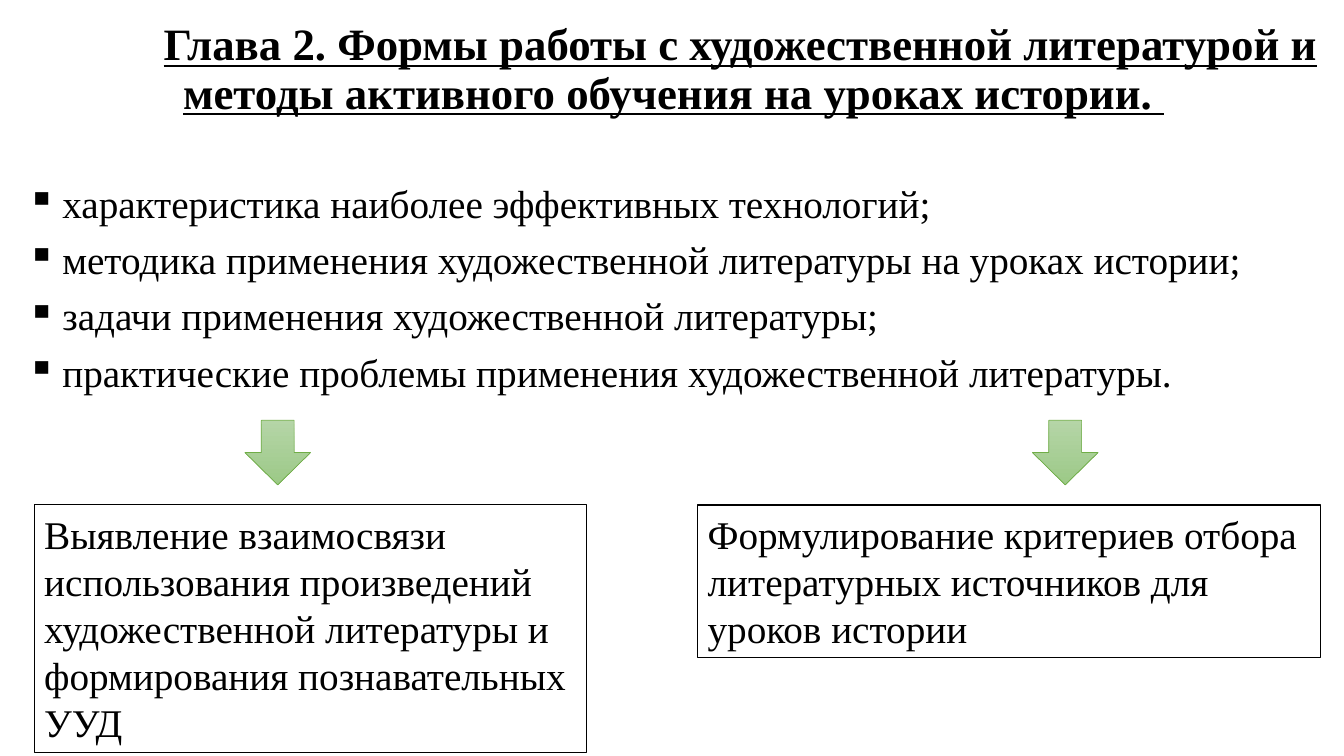
from dataclasses import dataclass

from lxml import etree
from pptx import Presentation
from pptx.dml.color import RGBColor
from pptx.enum import shapes, text
from pptx.oxml import ns
from pptx.util import Inches, Pt


@dataclass(frozen=True)
class Theme:
    """Colours, font and type sizes of the slide."""
    font: str = "Times New Roman"
    ink: RGBColor = RGBColor(0x00, 0x00, 0x00)
    arrow_top: RGBColor = RGBColor(0xB5, 0xD5, 0xA7)
    arrow_bottom: RGBColor = RGBColor(0x9C, 0xC9, 0x87)
    arrow_line: RGBColor = RGBColor(0x70, 0xAD, 0x47)
    title_size: Pt = Pt(32)
    body_size: Pt = Pt(28)


THEME = Theme()

TITLE = ("Глава 2. Формы работы с художественной литературой и "
         "методы активного обучения на уроках истории. ")
TOPICS = [
    "характеристика наиболее эффективных технологий;",
    "методика применения художественной литературы на уроках истории;",
    "задачи применения художественной литературы;",
    "практические проблемы применения художественной литературы.",
]
OUTCOMES = [
    (0.34, 5.48, 2.46, 2.43,
     "Выявление взаимосвязи использования произведений художественной "
     "литературы и формирования познавательных УУД"),
    (6.92, 6.18, 1.51, 10.24,
     "Формулирование критериев отбора литературных источников для уроков истории"),
]


def style_paragraph(paragraph, size):
    """Set the theme font, ink and size on a paragraph."""
    paragraph.font.name = THEME.font
    paragraph.font.size = size
    paragraph.font.color.rgb = THEME.ink


def set_indent(paragraph, left, first):
    """Set the left margin and first-line indent in inches."""
    properties = paragraph._p.get_or_add_pPr()
    properties.set("marL", str(Inches(left)))
    properties.set("indent", str(Inches(first)))
    return properties


def format_title(title):
    """Place and format the slide title."""
    title.left, title.top = Inches(0.17), Inches(0.17)
    title.width, title.height = Inches(13.02), Inches(1.1)
    frame = title.text_frame
    frame.text = TITLE
    frame.word_wrap = True
    frame.auto_size = text.MSO_AUTO_SIZE.NONE
    frame.vertical_anchor = text.MSO_ANCHOR.TOP
    paragraph = frame.paragraphs[0]
    set_indent(paragraph, 0, 1.33)
    paragraph.alignment = text.PP_ALIGN.CENTER
    paragraph.line_spacing = 0.9
    style_paragraph(paragraph, THEME.title_size)
    paragraph.font.bold = True
    paragraph.font.underline = True


def add_topics(slide):
    """Add the bulleted list of topics."""
    box = slide.shapes.add_textbox(Inches(0.17), Inches(1.78), Inches(13.02), Inches(2.3))
    frame = box.text_frame
    frame.word_wrap = True
    for index, topic in enumerate(TOPICS):
        paragraph = frame.add_paragraph() if index else frame.paragraphs[0]
        paragraph.text = topic
        paragraph.alignment = text.PP_ALIGN.JUSTIFY
        paragraph.line_spacing = 0.9
        paragraph.space_before = Pt(10 if index else 0)
        properties = set_indent(paragraph, 0.35, -0.35)
        etree.SubElement(properties, ns.qn("a:buChar"), char="▪")
        style_paragraph(paragraph, THEME.body_size)


def add_outcome(slide, left, width, height, wording):
    """Add a framed outcome box."""
    box = slide.shapes.add_textbox(Inches(left), Inches(5.01), Inches(width), Inches(height))
    box.line.color.rgb = THEME.ink
    box.line.width = Pt(0.75)
    frame = box.text_frame
    frame.word_wrap = True
    frame.auto_size = text.MSO_AUTO_SIZE.SHAPE_TO_FIT_TEXT
    frame.text = wording
    style_paragraph(frame.paragraphs[0], THEME.body_size)


def add_down_arrow(slide, left):
    """Add a green gradient arrow pointing at an outcome."""
    arrow = slide.shapes.add_shape(shapes.MSO_SHAPE.DOWN_ARROW, Inches(left), Inches(4.17),
                                   Inches(0.65), Inches(0.64))
    arrow.shadow.inherit = False
    arrow.fill.gradient()
    arrow.fill.gradient_angle = 270
    for stop, color in zip(arrow.fill.gradient_stops, (THEME.arrow_top, THEME.arrow_bottom)):
        stop.color.rgb = color
    arrow.line.color.rgb = THEME.arrow_line
    arrow.line.width = Pt(0.5)


def main():
    """Build and save the slide."""
    presentation = Presentation()
    presentation.slide_width = Inches(13.33)
    presentation.slide_height = Inches(7.5)
    slide = presentation.slides.add_slide(presentation.slide_layouts.get_by_name("Title Only"))
    format_title(slide.shapes.title)
    add_topics(slide)
    for left, width, height, arrow_left, wording in OUTCOMES:
        add_outcome(slide, left, width, height, wording)
        add_down_arrow(slide, arrow_left)
    presentation.save("out.pptx")


if __name__ == "__main__":
    main()
